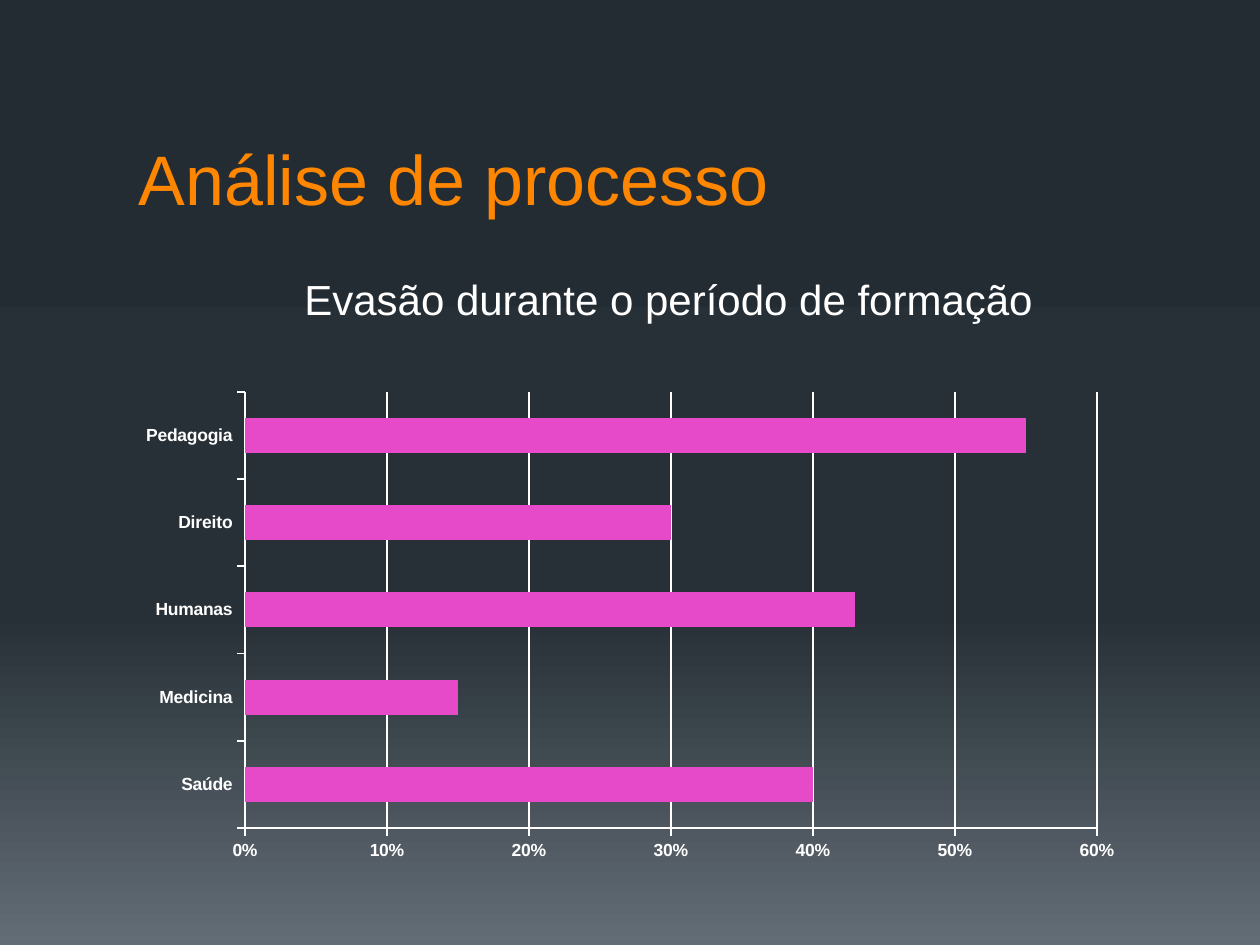
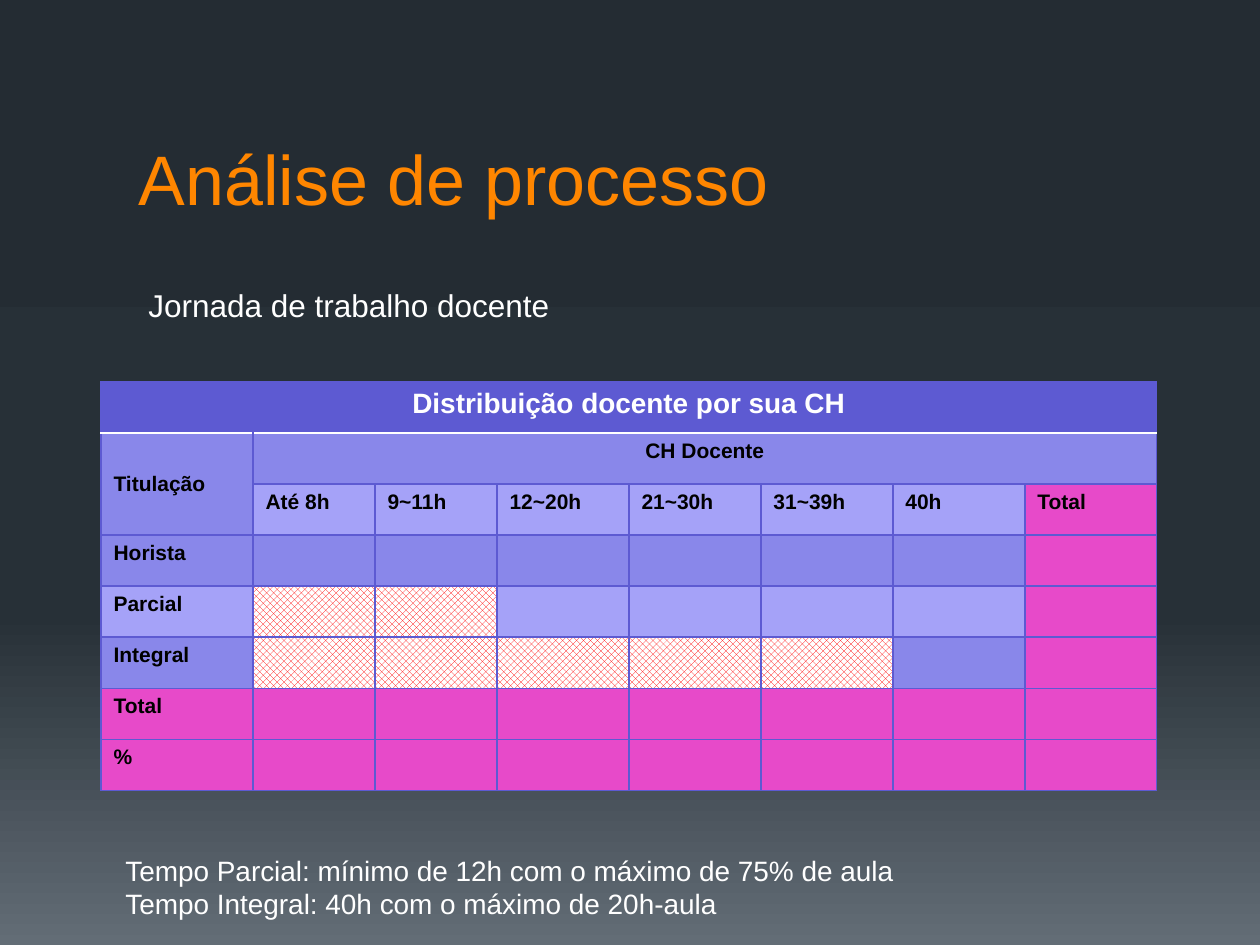
import copy

import lxml.etree
import pptx
import pptx.chart.data
import pptx.dml.color
import pptx.enum.chart
import pptx.enum.dml
import pptx.enum.text
import pptx.oxml.ns
import pptx.util

PX = 914400 / 126
FONT = "Arial"
WHITE, BLACK, ORANGE, PINK = "FFFFFF", "000000", "FF8600", "E74AC9"
VIOLET, BAND_DARK, BAND_LIGHT, RED = "5D5AD2", "8987EA", "A5A2F8", "FF0000"
BACKGROUND_STOPS = [(0, "242C33"), (0.65, "273037"), (1, "636D76")]

EVASION = {"Saúde": 0.4, "Medicina": 0.15, "Humanas": 0.43, "Direito": 0.3, "Pedagogia": 0.55}

COLUMN_WIDTHS = [152, 122, 122] + [132] * 5
ROW_HEIGHT = 51
TABLE_ROWS = [
    ["Distribuição docente por sua CH"],
    ["Titulação", "CH Docente"],
    ["", "Até 8h", "9~11h", "12~20h", "21~30h", "31~39h", "40h", "Total"],
    ["Horista"],
    ["Parcial"],
    ["Integral"],
    ["Total"],
    ["%"],
]
LAST_COLUMN = len(COLUMN_WIDTHS) - 1
FIRST_TOTAL_ROW = 6
BLOCKED_COLUMNS = {4: range(1, 3), 5: range(1, 6)}


def px(length):
    """Turn pixels into EMU."""
    return pptx.util.Emu(round(length * PX))


def rgb(value):
    """Turn a hex string into a colour."""
    return pptx.dml.color.RGBColor.from_string(value)


def style_font(font, size, color, bold=False):
    """Set the typeface, size, colour and weight of a font."""
    font.name = FONT
    font.size = pptx.util.Pt(size)
    font.color.rgb = rgb(color)
    font.bold = bold


def style_text(text_frame, size, color, bold=False):
    """Format every run of a text frame."""
    for paragraph in text_frame.paragraphs:
        for run in paragraph.runs:
            style_font(run.font, size, color, bold)


def style_line(line, color=WHITE, width=1):
    """Set the colour and width of a line."""
    line.color.rgb = rgb(color)
    line.width = pptx.util.Pt(width)


def set_background(master):
    """Give the slide master its vertical three-stop gradient."""
    fill = master.background.fill
    fill.gradient()
    fill.gradient_angle = 270
    stop_list = master.element.find(".//" + pptx.oxml.ns.qn("a:gsLst"))
    stop_list.append(copy.deepcopy(stop_list[-1]))
    for stop, (position, color) in zip(fill.gradient_stops, BACKGROUND_STOPS):
        stop.position = position
        stop.color.rgb = rgb(color)


def add_titled_slide(presentation, title):
    """Add a title-only slide with the shared title style."""
    slide = presentation.slides.add_slide(presentation.slide_layouts[5])
    shape = slide.shapes.title
    shape.left, shape.top, shape.width, shape.height = px(126), px(67), px(1008), px(159)
    text_frame = shape.text_frame
    text_frame.text = title
    text_frame.auto_size = pptx.enum.text.MSO_AUTO_SIZE.NONE
    text_frame.vertical_anchor = pptx.enum.text.MSO_ANCHOR.BOTTOM
    text_frame.paragraphs[0].alignment = pptx.enum.text.PP_ALIGN.LEFT
    style_text(text_frame, 40, ORANGE)
    return slide


def add_text(slide, text, left, top, width, height, size):
    """Add an unwrapped white text box that grows with its text."""
    shape = slide.shapes.add_textbox(px(left), px(top), px(width), px(height))
    text_frame = shape.text_frame
    text_frame.text = text
    text_frame.word_wrap = False
    text_frame.auto_size = pptx.enum.text.MSO_AUTO_SIZE.SHAPE_TO_FIT_TEXT
    style_text(text_frame, size, WHITE)


def add_evasion_chart(slide):
    """Add the horizontal bar chart of dropout by course."""
    data = pptx.chart.data.CategoryChartData(number_format="0%")
    data.categories = list(EVASION)
    data.add_series("Series 1", list(EVASION.values()))
    chart = slide.shapes.add_chart(
        pptx.enum.chart.XL_CHART_TYPE.BAR_CLUSTERED, px(126), px(382), px(1008), px(488), data
    ).chart
    chart.has_legend = False
    chart.has_title = False
    style_font(chart.font, 10, WHITE)
    for axis in (chart.category_axis, chart.value_axis):
        axis.major_tick_mark = pptx.enum.chart.XL_TICK_MARK.OUTSIDE
        axis.minor_tick_mark = pptx.enum.chart.XL_TICK_MARK.NONE
        style_font(axis.tick_labels.font, 10, WHITE, bold=True)
        style_line(axis.format.line)
    value_axis = chart.value_axis
    value_axis.minimum_scale, value_axis.maximum_scale, value_axis.major_unit = 0, 0.6, 0.1
    value_axis.tick_labels.number_format = "0%"
    value_axis.tick_labels.number_format_is_linked = False
    style_line(value_axis.major_gridlines.format.line)
    plot = chart.plots[0]
    plot.vary_by_categories = False
    plot.gap_width = 150
    bars = plot.series[0].format.fill
    bars.solid()
    bars.fore_color.rgb = rgb(PINK)


def set_border(cell, side, color, width):
    """Add one border line (L, R, T or B) to a cell."""
    properties = cell._tc.get_or_add_tcPr()
    line = lxml.etree.SubElement(
        properties, pptx.oxml.ns.qn("a:ln" + side), w=str(pptx.util.Pt(width))
    )
    solid = lxml.etree.SubElement(line, pptx.oxml.ns.qn("a:solidFill"))
    lxml.etree.SubElement(solid, pptx.oxml.ns.qn("a:srgbClr"), val=color)


def cell_color(row, column):
    """Choose the fill of a cell from its place in the table."""
    if row == 0:
        return VIOLET
    if row >= FIRST_TOTAL_ROW or (column == LAST_COLUMN and row > 1):
        return PINK
    return BAND_DARK if row % 2 else BAND_LIGHT


def fill_cell(cell, row, column):
    """Fill a cell, with a diamond pattern where hours do not apply."""
    if column in BLOCKED_COLUMNS.get(row, ()):
        cell.fill.patterned()
        cell.fill.pattern = pptx.enum.dml.MSO_PATTERN.OUTLINED_DIAMOND
        cell.fill.fore_color.rgb = rgb(RED)
        cell.fill.back_color.rgb = rgb(WHITE)
    else:
        cell.fill.solid()
        cell.fill.fore_color.rgb = rgb(cell_color(row, column))


def add_workload_table(slide):
    """Add the table of teachers by degree and weekly hours."""
    row_count = len(TABLE_ROWS)
    table = slide.shapes.add_table(
        row_count, len(COLUMN_WIDTHS), px(101), px(382),
        px(sum(COLUMN_WIDTHS)), px(ROW_HEIGHT * row_count),
    ).table
    table.horz_banding = False
    for column, width in zip(table.columns, COLUMN_WIDTHS):
        column.width = px(width)
    for row_index, texts in enumerate(TABLE_ROWS):
        table.rows[row_index].height = px(ROW_HEIGHT)
        for column_index in range(len(COLUMN_WIDTHS)):
            cell = table.cell(row_index, column_index)
            for side in "LRTB":
                under_header = (row_index, side) in ((0, "B"), (1, "T"))
                set_border(cell, side, *((WHITE, 1.5) if under_header else (VIOLET, 1)))
            fill_cell(cell, row_index, column_index)
            if column_index < len(texts) and texts[column_index]:
                cell.text_frame.text = texts[column_index]
                style_text(cell.text_frame, *((12, BLACK) if row_index else (16, WHITE)), bold=True)
    table.cell(0, 0).merge(table.cell(0, LAST_COLUMN))
    table.cell(1, 0).merge(table.cell(2, 0))
    table.cell(1, 1).merge(table.cell(1, LAST_COLUMN))
    table.cell(1, 0).vertical_anchor = pptx.enum.text.MSO_ANCHOR.MIDDLE
    for heading in (table.cell(0, 0), table.cell(1, 1)):
        heading.text_frame.paragraphs[0].alignment = pptx.enum.text.PP_ALIGN.CENTER


def main():
    """Build both slides and save the presentation."""
    presentation = pptx.Presentation()
    presentation.slide_width, presentation.slide_height = px(1260), px(945)
    set_background(presentation.slide_master)

    slide = add_titled_slide(presentation, "Análise de processo")
    add_evasion_chart(slide)
    add_text(slide, "Evasão durante o período de formação", 292, 267, 761, 63, 24)

    slide = add_titled_slide(presentation, "Análise de processo")
    add_workload_table(slide)
    add_text(slide, "Jornada de trabalho docente", 136, 280, 431, 50, 18)
    notes = (
        "Tempo Parcial: mínimo de 12h com o máximo de 75% de aula\n"
        "Tempo Integral: 40h com o máximo de 20h-aula"
    )
    add_text(slide, notes, 113, 847, 804, 81, 16)

    presentation.save("out.pptx")


if __name__ == "__main__":
    main()
